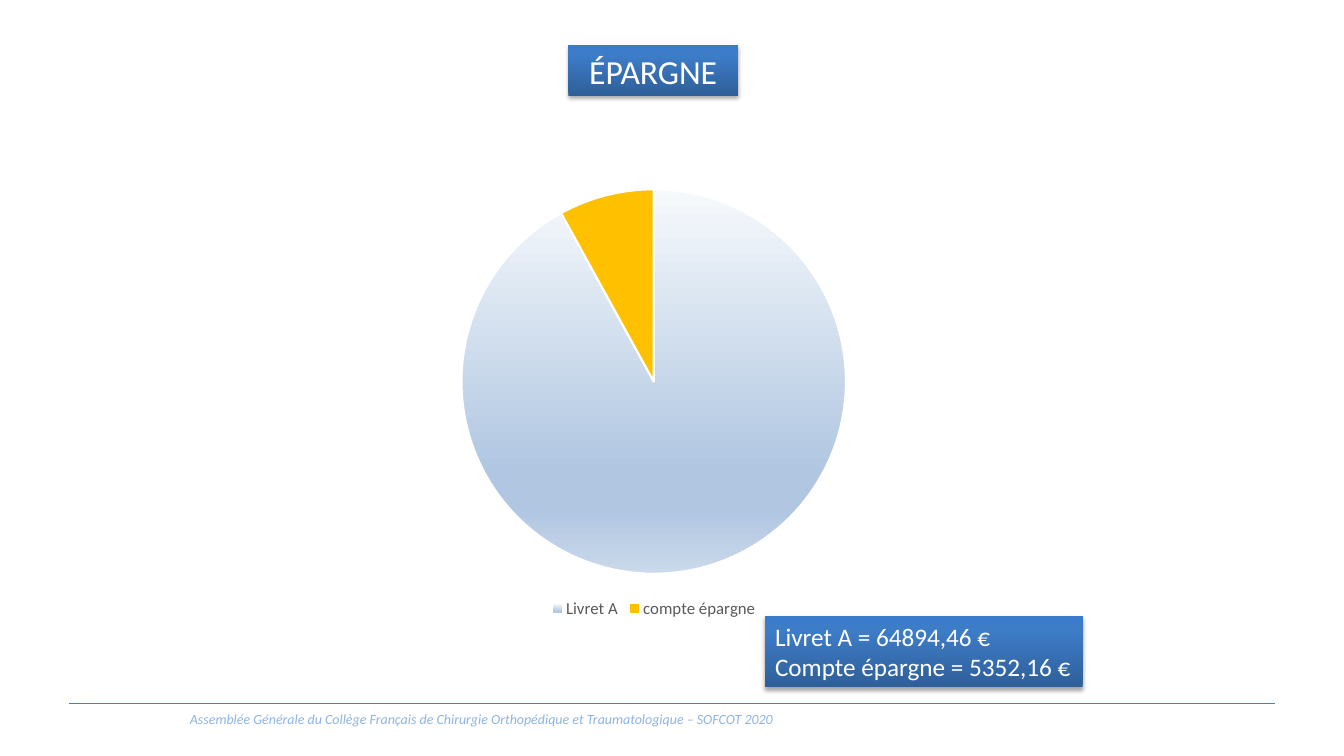
"""Build the savings slide: a pie of two accounts with their balances."""
from dataclasses import dataclass

from lxml.etree import SubElement
from pptx import Presentation
from pptx.chart.data import CategoryChartData
from pptx.dml.color import RGBColor
from pptx.enum.chart import XL_CHART_TYPE as ChartType, XL_LEGEND_POSITION as LegendPosition
from pptx.enum.shapes import MSO_CONNECTOR as Connector, MSO_SHAPE as Preset
from pptx.enum.text import MSO_AUTO_SIZE as AutoSize, PP_ALIGN as Align
from pptx.oxml.ns import qn
from pptx.util import Inches, Pt

FONT = "Calibri"
WIDTH, HEIGHT = Inches(13.333), Inches(7.5)
BOX_STOPS = ((0, "2F5F99"), (80, "3D7CC7"), (100, "3A7CCB"))
SLICE_STOPS = ((0, "F6F9FC"), (74, "B0C6E1"), (83, "B0C6E1"), (100, "CAD9EB"))


@dataclass(frozen=True)
class Area:
    left: float
    top: float
    width: float
    height: float

    def emu(self) -> tuple[int, int, int, int]:
        return (across(self.left), down(self.top), across(self.width), down(self.height))


@dataclass(frozen=True)
class Label:
    area: Area
    lines: tuple[str, ...]
    size: float
    align: Align


LABELS = (
    Label(Area(42.3, 6, 12.6, 6.67), ("ÉPARGNE",), 24, Align.CENTER),
    Label(Area(56.93, 81.47, 23.63, 9.47),
          ("Livret A = 64894,46 €", "Compte épargne = 5352,16 €"), 18, Align.LEFT),
)
FOOTER = Label(Area(5.1, 93.33, 61.43, 3.6),
               ("Assemblée Générale du Collège Français de Chirurgie Orthopédique"
                " et Traumatologique – SOFCOT 2020",), 10, Align.CENTER)
PIE_AREA = Area(23.63, 23.2, 50.03, 59.2)


def across(percent: float) -> int:
    return round(WIDTH * percent / 100)


def down(percent: float) -> int:
    return round(HEIGHT * percent / 100)


def color(code: str) -> RGBColor:
    return RGBColor.from_string(code)


def set_gradient(fill, root, stops, angle: float) -> None:
    fill.gradient()
    fill.gradient_angle = angle
    stop_list = next(root.iter(qn("a:gsLst")))
    for old in list(stop_list):
        stop_list.remove(old)
    for position, code in stops:
        stop = SubElement(stop_list, qn("a:gs"), pos=str(position * 1000))
        SubElement(stop, qn("a:srgbClr"), val=code)


def add_shadow(shape) -> None:
    shape.shadow.inherit = False
    effects = next(shape._element.iter(qn("a:effectLst")))
    shadow = SubElement(effects, qn("a:outerShdw"), blurRad=str(Pt(3.1)),
                        dist=str(Pt(1.8)), dir="5400000", rotWithShape="0")
    tint = SubElement(shadow, qn("a:srgbClr"), val="000000")
    SubElement(tint, qn("a:alpha"), val="35000")


def write(shape, label: Label, code: str, italic: bool = False) -> None:
    frame = shape.text_frame
    frame.text = "\n".join(label.lines)
    frame.word_wrap = True
    frame.auto_size = AutoSize.SHAPE_TO_FIT_TEXT
    for para in frame.paragraphs:
        para.alignment = label.align
        font = para.font
        font.name, font.size, font.italic = FONT, Pt(label.size), italic
        font.color.rgb = color(code)


def add_label(page, label: Label) -> None:
    box = page.shapes.add_shape(Preset.RECTANGLE, *label.area.emu())
    set_gradient(box.fill, box._element, BOX_STOPS, 90)
    box.line.fill.background()
    add_shadow(box)
    write(box, label, "FFFFFF")
    box.text_frame.word_wrap = False


def add_footer(page) -> None:
    level = down(93.07)
    rule = page.shapes.add_connector(Connector.STRAIGHT, across(5.1), level, across(94.88), level)
    rule.line.color.rgb = color("4B7EBC")
    rule.line.width = Pt(0.75)
    SubElement(rule._element.spPr, qn("a:effectLst"))
    write(page.shapes.add_textbox(*FOOTER.area.emu()), FOOTER, "8EB4E3", italic=True)


def add_pie(page) -> None:
    data = CategoryChartData()
    data.categories = ("Livret A", "compte épargne")
    data.add_series("Series 1", (92, 8))
    chart = page.shapes.add_chart(ChartType.PIE, *PIE_AREA.emu(), data).chart
    chart.has_title = False
    chart.font.name, chart.font.size = FONT, Pt(10)
    chart.font.color.rgb = color("000000")
    chart.has_legend = True
    legend = chart.legend
    legend.position = LegendPosition.BOTTOM
    legend.include_in_layout = False
    legend.font.name, legend.font.size = FONT, Pt(12)
    legend.font.color.rgb = color("595959")
    chart.plots[0].vary_by_categories = True
    series = chart.plots[0].series[0]
    livret, savings = (series.points[index].format for index in range(2))
    set_gradient(livret.fill, series._element, SLICE_STOPS, 270)
    savings.fill.solid()
    savings.fill.fore_color.rgb = color("FFC000")
    for part in (livret, savings):
        part.line.color.rgb = color("FFFFFF")
        part.line.width = Pt(1.5)


def main() -> None:
    deck = Presentation()
    deck.slide_width, deck.slide_height = WIDTH, HEIGHT
    page = deck.slides.add_slide(deck.slide_layouts[6])
    title, balances = LABELS
    add_footer(page)
    add_label(page, title)
    add_pie(page)
    add_label(page, balances)
    deck.save("out.pptx")


if __name__ == "__main__":
    main()
